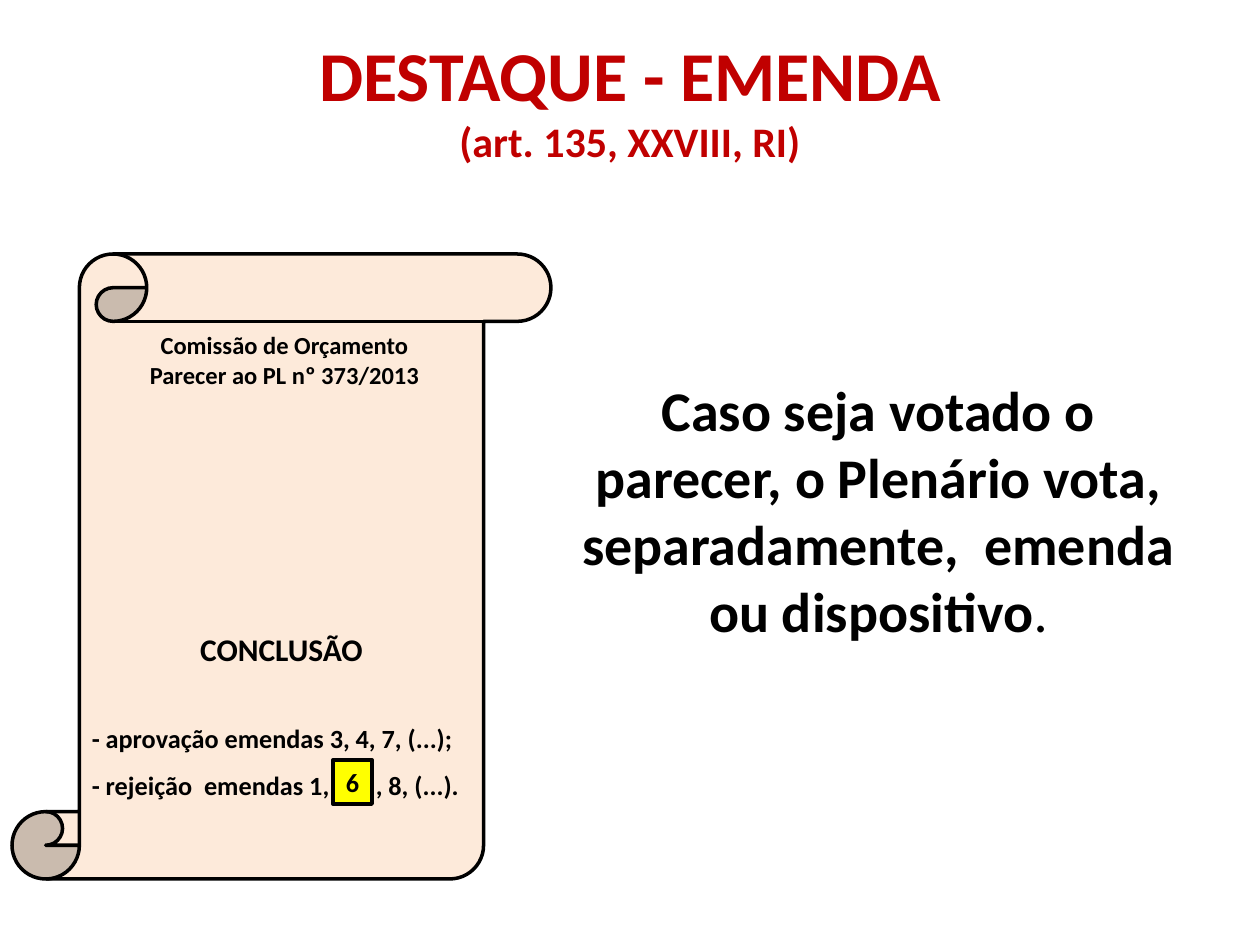
"""Build the slide on voting an amendment separately from the report."""
from lxml import etree
from pptx import Presentation, util as u
from pptx.dml.color import RGBColor
from pptx.enum import shapes, text
from pptx.oxml.ns import qn

PX = 914400 // 126
THEME = dict(
    font="Calibri", red="C00000", ink="000000", paper="FDEADA", mark="FFFF00",
    head=40, sub=24, body=32, part=18, note=14, item=15,
)
MID, LEFT = text.PP_ALIGN.CENTER, text.PP_ALIGN.LEFT

TITLE = "DESTAQUE - EMENDA\v(art. 135, XXVIII, RI)"
BODY = ("Caso seja votado o parecer, o Plenário vota, separadamente,  emenda ou dispositivo", ".")
SCROLL = ["CONCLUSÃO", "- aprovação emendas 3, 4, 7, (...);", "- rejeição  emendas 1,\t, 8, (...)."]
LABEL = ["Comissão de Orçamento", "Parecer ao PL nº 373/2013"]
MARK = "6"
BOX = dict(
    title=(243, 16, 774, 166), body=(551, 369, 655, 291), scroll=(12, 254, 539, 625),
    label=(136, 324, 297, 72), mark=(333, 760, 39, 44),
)
TAB, FOOT = 284, 44


def place(name):
    return [n * PX for n in BOX[name]]


def style(run, size, color="ink", bold=True):
    font = run.font
    font.name, font.size, font.bold = THEME["font"], u.Pt(THEME[size]), bold
    font.color.rgb = RGBColor.from_string(THEME[color])


def write(shape, words, sizes, color="ink", wrap=True):
    frame = shape.text_frame
    frame.text, frame.word_wrap = words, wrap
    for para in frame.paragraphs:
        para.alignment = MID
    runs = [run for para in frame.paragraphs for run in para.runs]
    for run, size in zip(runs, sizes):
        style(run, size, color)
    return frame


def draw(slide, kind, name, fill, width):
    shape = slide.shapes.add_shape(kind, *place(name))
    shape.shadow.inherit = False
    shape.fill.solid()
    shape.fill.fore_color.rgb = RGBColor.from_string(THEME[fill])
    shape.line.color.rgb = RGBColor.from_string(THEME["ink"])
    shape.line.width = u.Pt(width)
    return shape


def add_tab(para, pos):
    tabs = etree.SubElement(para._p.get_or_add_pPr(), qn("a:tabLst"))
    etree.SubElement(tabs, qn("a:tab"), pos=str(pos * PX), algn="l")


def main():
    deck = Presentation()
    deck.slide_width, deck.slide_height = 1260 * PX, 945 * PX
    slide = deck.slides.add_slide(deck.slide_layouts[6])
    boxes = slide.shapes

    title = write(boxes.add_textbox(*place("title")), TITLE, ["head", "sub"], "red")
    title.vertical_anchor = text.MSO_ANCHOR.MIDDLE

    body = write(boxes.add_textbox(*place("body")), BODY[0], ["body"])
    stop = body.paragraphs[0].add_run()
    stop.text = BODY[1]
    style(stop, "body", bold=False)

    scroll = draw(slide, shapes.MSO_SHAPE.VERTICAL_SCROLL, "scroll", "paper", 2)
    frame = write(scroll, "\n".join(SCROLL), ["part", "item", "item"])
    frame.vertical_anchor = text.MSO_ANCHOR.BOTTOM
    frame.margin_bottom = FOOT * PX
    items = frame.paragraphs[1:]
    for para in items:
        para.alignment, para.line_spacing = LEFT, 1.5
    items[0].space_before = u.Pt(22)
    add_tab(items[1], TAB)

    write(boxes.add_textbox(*place("label")), "\n".join(LABEL), ["note"] * 2, wrap=False)

    mark = draw(slide, shapes.MSO_SHAPE.RECTANGLE, "mark", "mark", 2.25)
    write(mark, MARK, ["item"], wrap=False)

    deck.save("out.pptx")


if __name__ == "__main__":
    main()
